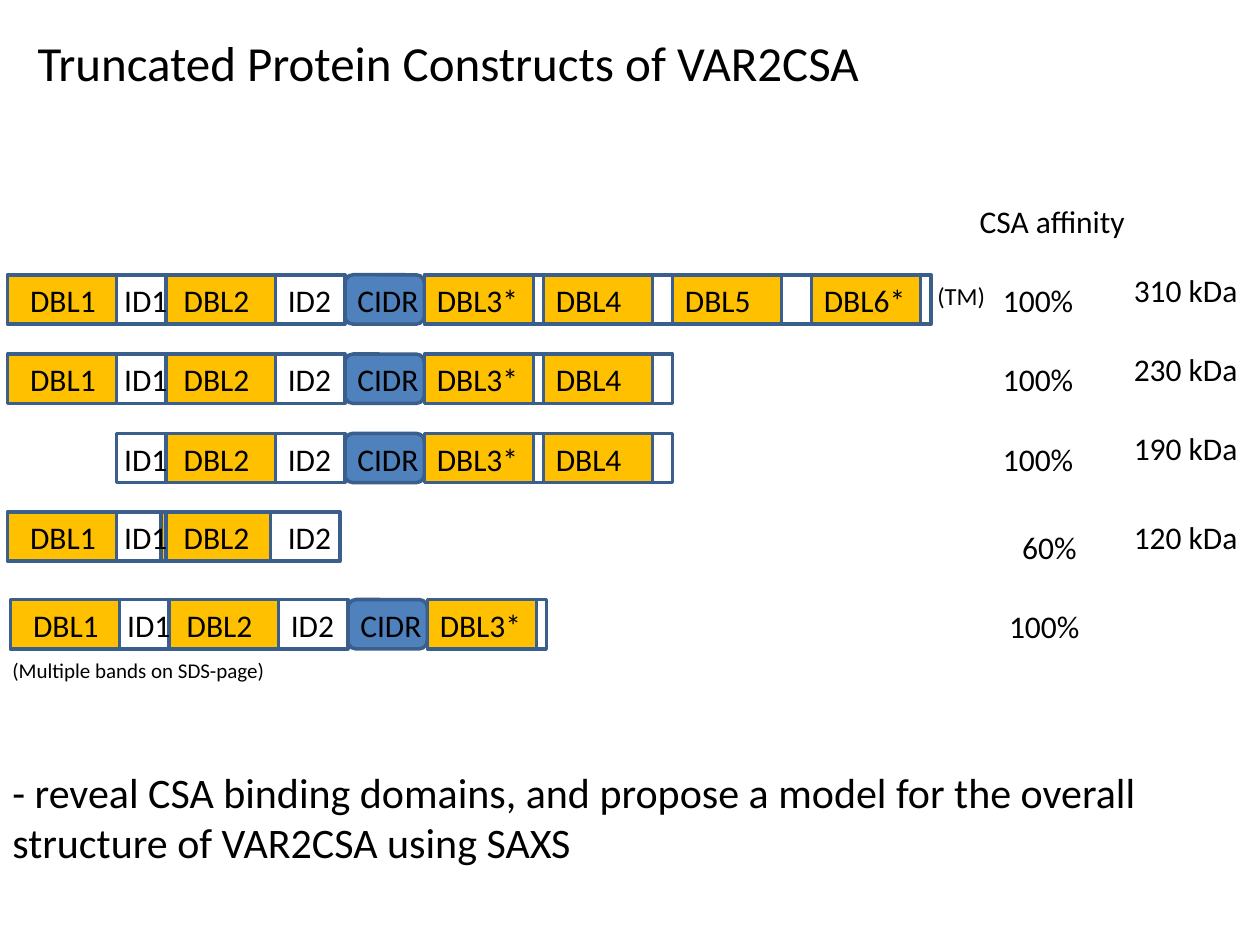
from pptx import Presentation
from pptx.dml.color import RGBColor
from pptx.enum.shapes import MSO_SHAPE
from pptx.enum.text import PP_ALIGN
from pptx.util import Pt

RECT, ROUND = MSO_SHAPE.RECTANGLE, MSO_SHAPE.ROUNDED_RECTANGLE
LEFT, CENTER = PP_ALIGN.LEFT, PP_ALIGN.CENTER

GOLD = RGBColor(0xFF, 0xC0, 0x00)
BLUE = RGBColor(0x4F, 0x81, 0xBD)
EDGE = RGBColor(0x3A, 0x5F, 0x8C)
WHITE = RGBColor(0xFF, 0xFF, 0xFF)
BLACK = RGBColor(0, 0, 0)

BAR_H, TEXT_H, LABEL_W = 28.2, 29, 85

# Domains in chain order: label, width, fill, label offset
CHAIN = [
    ("DBL1", 62.4, GOLD, 5.8),
    ("ID1", 28.3, None, -2.8),
    ("DBL2", 62.4, GOLD, 2.9),
    ("ID2", 39.7, None, 0),
    ("CIDR", 45.4, BLUE, 0),
    ("DBL3*", 62.4, GOLD, 0),
    ("", 5.6, None, 0),
    ("DBL4", 62.4, GOLD, 0),
    ("", 11.4, None, 0),
    ("DBL5", 62.4, GOLD, 0),
    ("", 17, WHITE, 0),
    ("DBL6*", 62.4, GOLD, 0),
    ("", 5.8, None, 0),
]

# Constructs: left, top, first domain, end domain, shift of boxes from DBL2 on
ROWS = [
    (4.3, 157, 0, 13, 0),
    (4.3, 202.3, 0, 9, 0),
    (4.3, 247.6, 1, 9, 0),
    (4.3, 292.5, 0, 4, -2.9),
    (6, 342.6, 0, 7, 0),
]

# Results: text, left, top
AFFINITY = [("100%", 566, 157), ("100%", 566, 202.3), ("100%", 566, 247.6),
            ("60%", 577, 298.3), ("100%", 569.5, 343.3)]
MASS = [("310 kDa", 151.2), ("230 kDa", 196.5), ("190 kDa", 241.8),
        ("120 kDa", 292.5)]


def add_text(slide, text, x, y, w, h=TEXT_H, size=18, align=LEFT):
    frame = slide.shapes.add_textbox(Pt(x), Pt(y), Pt(w), Pt(h)).text_frame
    frame.word_wrap = True
    para = frame.paragraphs[0]
    para.alignment = align
    run = para.add_run()
    run.text = text
    style = {"name": "Calibri", "size": Pt(size)}
    for key, value in style.items():
        setattr(run.font, key, value)
    run.font.color.rgb = BLACK


def add_box(slide, kind, x, y, w, fill):
    box = slide.shapes.add_shape(kind, Pt(x), Pt(y), Pt(w), Pt(BAR_H))
    box.shadow.inherit = False
    if fill is None:
        box.fill.background()
    else:
        box.fill.solid()
        box.fill.fore_color.rgb = fill
    box.line.color.rgb = EDGE
    box.line.width = Pt(2)


def add_chain(slide, x, y, first, end, shift):
    parts = []
    pos = x
    for index, (name, width, fill, offset) in enumerate(CHAIN[:end]):
        if index >= first:
            nudge = shift if index >= 2 else 0
            parts.append((name, pos, width, fill, offset, nudge))
        pos += width
    # Filled domains lie under the open linkers
    parts.sort(key=lambda part: part[3] is None)
    for name, left, width, fill, offset, nudge in parts:
        kind = ROUND if name == "CIDR" else RECT
        add_box(slide, kind, left + nudge, y, width, fill)
    # Labels lie on top and may run past their domain
    for name, left, width, fill, offset, nudge in parts:
        if name:
            add_text(slide, name, left + offset, y, LABEL_W)


def add_results(slide, x, y, w):
    add_text(slide, "CSA affinity", x, y, w, align=CENTER)
    for text, left, top in AFFINITY:
        add_text(slide, text, left, top, LABEL_W)
    for text, top in MASS:
        add_text(slide, text, 640.8, top, 79.2)


def main():
    deck = Presentation()
    deck.slide_width, deck.slide_height = Pt(720), Pt(540)
    slide = deck.slides.add_slide(deck.slide_layouts[6])

    # Title
    add_text(slide, "Truncated Protein Constructs of VAR2CSA",
             14.4, 15, 567, 97, size=28)

    # Constructs and their notes
    for row in ROWS:
        add_chain(slide, *row)
    add_text(slide, "(TM)", 528.5, 157, 65.5, 24.5, size=14)
    add_text(slide, "(Multiple bands on SDS-page)", 0, 372.3, 238, 21.6,
             size=12)

    # Affinity and mass
    add_results(slide, 513.4, 111.6, 175.7)

    # Aim
    add_text(slide, "- reveal CSA binding domains, and propose a model for "
             "the overall structure of VAR2CSA using SAXS",
             0, 434.2, 689, 65.5, size=24)

    deck.save("out.pptx")


if __name__ == "__main__":
    main()
